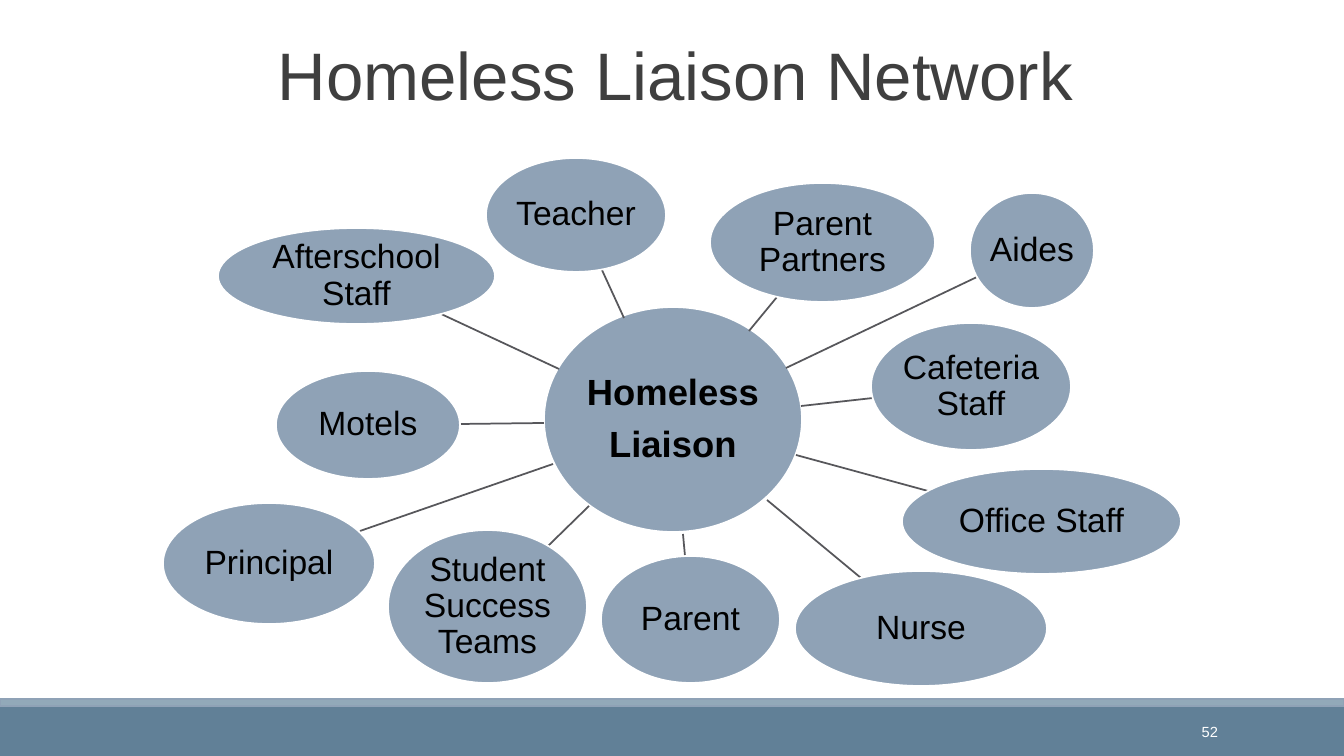
from lxml import etree
from pptx import Presentation, util as u
from pptx.dml.color import RGBColor
from pptx.enum import shapes, text
from pptx.oxml.ns import qn

PX = u.Inches(10) // 1008
KIND = shapes.MSO_SHAPE
BLUE, WHITE, BLACK = "8FA2B6", "FFFFFF", "000000"


def paint(part, hue):
    """Give a fill, or the fill of a line or font, one solid colour."""
    part.solid()
    part.fore_color.rgb = RGBColor.from_string(hue)


def write(shape, lines, size, hue, align="CENTER", anchor="MIDDLE",
          pad=(0, 0), bold=False, space=None, gap=0):
    """Fill a shape with one paragraph per line; pad is (side, top) in px."""
    frame = shape.text_frame
    frame.word_wrap = True
    frame.vertical_anchor = getattr(text.MSO_ANCHOR, anchor)
    frame.margin_left = frame.margin_right = pad[0] * PX
    frame.margin_top = frame.margin_bottom = pad[1] * PX
    for i, line in enumerate(lines):
        para = frame.add_paragraph() if i else frame.paragraphs[0]
        para.alignment = getattr(text.PP_ALIGN, align)
        para.line_spacing = space
        if i:
            para.space_before = u.Pt(gap)
        run = para.add_run()
        run.text = line
        run.font.name = "Arial"
        run.font.size = u.Pt(size)
        run.font.bold = bold
        paint(run.font.fill, hue)


deck = Presentation()
deck.slide_width, deck.slide_height = 1344 * PX, 756 * PX
slide = deck.slides.add_slide(deck.slide_layouts[6])
add = slide.shapes

# Footer bars
for top, high, fill, edge in [(707, 49, "618097", None), (699, 7, "92A9B9", BLUE)]:
    bar = add.add_shape(KIND.RECTANGLE, 0, top * PX, 1344 * PX, high * PX)
    bar.shadow.inherit = False
    paint(bar.fill, fill)
    if edge:
        paint(bar.line.fill, edge)
        bar.line.width = u.Pt(1.25)
    else:
        bar.line.fill.background()

title = add.add_textbox(121 * PX, 41 * PX, 1109 * PX, 150 * PX)
write(title, ["Homeless Liaison Network"], 48, "3F3F3F", anchor="TOP",
      pad=(10, 5), space=0.85)

# Each node: label, oval (left, top, width, height), spoke (from x, y to x, y)
hub = "Homeless Liaison"
nodes = [
    (hub, (544, 307, 258, 225), None),
    ("Teacher", (486, 158, 180, 114), (624, 318, 602, 270)),
    ("Parent Partners", (710, 183, 225, 119), (749, 331, 777, 297)),
    ("Aides", (970, 193, 124, 115), (786, 368, 977, 277)),
    ("Cafeteria Staff", (871, 323, 200, 127), (801, 406, 873, 398)),
    ("Office Staff", (902, 469, 279, 105), (796, 455, 928, 491)),
    ("Nurse", (795, 571, 252, 115), (767, 500, 861, 578)),
    ("Parent", (601, 556, 179, 127), (683, 534, 685, 556)),
    ("Student Success Teams", (388, 530, 199, 153), (589, 506, 548, 546)),
    ("Principal", (163, 503, 212, 121), (553, 464, 360, 531)),
    ("Motels", (276, 371, 184, 108), (544, 423, 461, 424)),
    ("Afterschool Staff", (218, 228, 277, 96), (559, 369, 439, 313)),
]
for label, box, ends in nodes:
    if ends:
        spoke = add.add_connector(shapes.MSO_CONNECTOR.STRAIGHT, *[n * PX for n in ends])
        paint(spoke.line.fill, "57575B")
        spoke.line.width = u.Pt(1.25)
        etree.SubElement(spoke._element.spPr, qn("a:effectLst"))
    kind = KIND.FLOWCHART_CONNECTOR if label == "Parent Partners" else KIND.OVAL
    oval = add.add_shape(kind, *[n * PX for n in box])
    oval.shadow.inherit = False
    paint(oval.fill, BLUE)
    paint(oval.line.fill, WHITE)
    oval.line.width = u.Pt(1.25)
    if label == hub:
        write(oval, label.split(), 26, BLACK, bold=True, space=0.9, gap=9.1)
    else:
        write(oval, [label], 24, BLACK, space=0.9)

number = add.add_textbox(1084 * PX, 712 * PX, 144 * PX, 40 * PX)
write(number, ["52"], 10.5, WHITE, align="RIGHT", pad=(10, 5))

deck.save("out.pptx")
